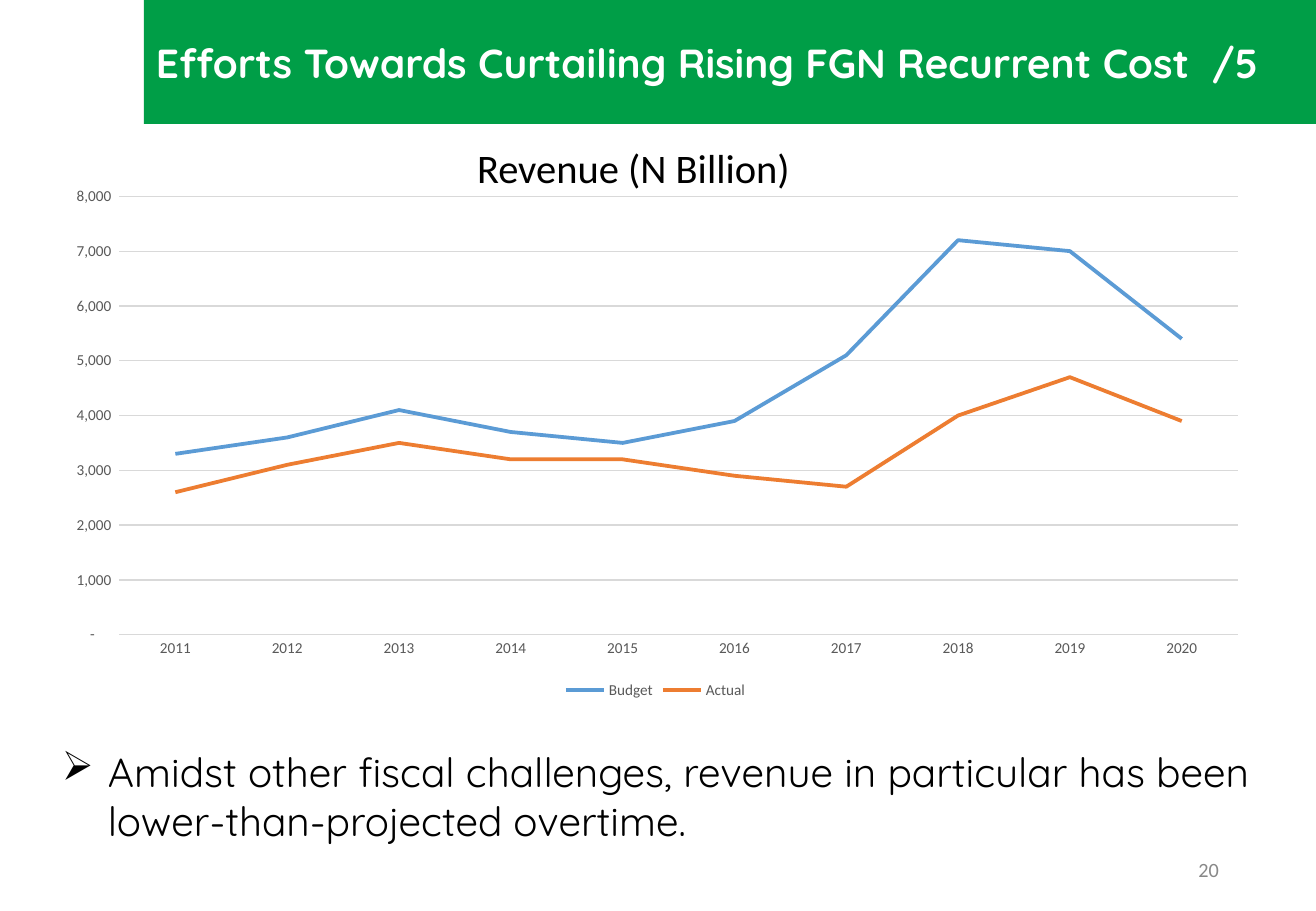
from lxml import etree
from pptx import Presentation
from pptx.chart.data import CategoryChartData
from pptx.dml.color import RGBColor
from pptx.enum.chart import XL_CHART_TYPE, XL_LEGEND_POSITION, XL_TICK_MARK
from pptx.enum.shapes import MSO_SHAPE
from pptx.enum.text import MSO_ANCHOR, PP_ALIGN
from pptx.oxml.ns import qn
from pptx.util import Emu, Pt

EMU_PER_PX = 7526
SLIDE_WIDTH, SLIDE_HEIGHT = 1316, 911

GREEN = RGBColor(0x00, 0x9E, 0x47)
WHITE = RGBColor(0xFF, 0xFF, 0xFF)
BLACK = RGBColor(0x00, 0x00, 0x00)
PAGE_GREY = RGBColor(0x88, 0x88, 0x88)
LABEL_GREY = RGBColor(0x59, 0x59, 0x59)
GRID_GREY = RGBColor(0xD9, 0xD9, 0xD9)
BLUE = RGBColor(0x5B, 0x9B, 0xD5)
ORANGE = RGBColor(0xED, 0x7D, 0x31)

HEADING_FONT = "Quicksand"
LABEL_FONT = "Calibri"

LEFT, CENTER, RIGHT, JUSTIFY = (
    PP_ALIGN.LEFT, PP_ALIGN.CENTER, PP_ALIGN.RIGHT, PP_ALIGN.JUSTIFY)
TOP, MIDDLE = MSO_ANCHOR.TOP, MSO_ANCHOR.MIDDLE
RECTANGLE = MSO_SHAPE.RECTANGLE
LINE_CHART = XL_CHART_TYPE.LINE
LEGEND_BOTTOM = XL_LEGEND_POSITION.BOTTOM
NO_TICKS = XL_TICK_MARK.NONE

YEARS = [str(year) for year in range(2011, 2021)]
REVENUE = [
    ("Budget", BLUE, [3300, 3600, 4100, 3700, 3500, 3900, 5100, 7200, 7000, 5400]),
    ("Actual", ORANGE, [2600, 3100, 3500, 3200, 3200, 2900, 2700, 4000, 4700, 3900]),
]
ACCOUNTING_FORMAT = r'_(* #,##0_);_(* \(#,##0\);_(* "-"??_);_('


def px(length):
    return Emu(length * EMU_PER_PX)


def box(left, top, width, height):
    return px(left), px(top), px(width), px(height)


def style_font(font, size, color, name=LABEL_FONT, bold=False):
    font.name = name
    font.size = Pt(size)
    font.bold = bold
    font.color.rgb = color


def add_bullet(paragraph, character, margin, hanging):
    properties = paragraph._p.get_or_add_pPr()
    properties.set("marL", str(px(margin)))
    properties.set("indent", str(px(-hanging)))
    etree.SubElement(properties, qn("a:buChar")).set("char", character)


def write_text(shape, text, *, size, color, font=LABEL_FONT, bold=False,
               align=LEFT, anchor=TOP, wrap=True, bullet=None):
    """Fill a shape with one formatted paragraph; bullet is (character, margin, hanging)."""
    frame = shape.text_frame
    frame.word_wrap = wrap
    frame.vertical_anchor = anchor
    paragraph = frame.paragraphs[0]
    paragraph.alignment = align
    if bullet:
        add_bullet(paragraph, *bullet)
    run = paragraph.add_run()
    run.text = text
    style_font(run.font, size, color, font, bold)


def add_text(slide, bounds, text, **text_format):
    write_text(slide.shapes.add_textbox(*box(*bounds)), text, **text_format)


def add_banner(slide, bounds, text, **text_format):
    banner = slide.shapes.add_shape(RECTANGLE, *box(*bounds))
    banner.shadow.inherit = False
    banner.fill.solid()
    banner.fill.fore_color.rgb = GREEN
    banner.line.fill.background()
    write_text(banner, text, **text_format)


def style_line(line, color, width):
    line.color.rgb = color
    line.width = Pt(width)


def style_axis(axis):
    axis.major_tick_mark = NO_TICKS
    axis.minor_tick_mark = NO_TICKS
    style_font(axis.tick_labels.font, 9, LABEL_GREY)


def add_revenue_chart(slide, bounds):
    data = CategoryChartData()
    data.categories = YEARS
    for name, _, values in REVENUE:
        data.add_series(name, values)
    chart = slide.shapes.add_chart(LINE_CHART, *box(*bounds), data).chart
    chart.has_title = False
    style_font(chart.font, 10, BLACK)

    chart.has_legend = True
    chart.legend.position = LEGEND_BOTTOM
    chart.legend.include_in_layout = False
    style_font(chart.legend.font, 9, LABEL_GREY)

    category_axis, value_axis = chart.category_axis, chart.value_axis
    style_axis(category_axis)
    style_line(category_axis.format.line, GRID_GREY, 0.75)
    style_axis(value_axis)
    value_axis.format.line.fill.background()
    value_axis.minimum_scale, value_axis.maximum_scale = 0, 8000
    value_axis.major_unit = 1000
    value_axis.has_major_gridlines = True
    style_line(value_axis.major_gridlines.format.line, GRID_GREY, 0.75)
    value_axis.tick_labels.number_format = ACCOUNTING_FORMAT
    value_axis.tick_labels.number_format_is_linked = False

    plot = chart.plots[0]
    plot.vary_by_categories = False
    for series, (_, color, _) in zip(plot.series, REVENUE):
        series.smooth = False
        style_line(series.format.line, color, 2.25)


def main():
    presentation = Presentation()
    presentation.slide_width = px(SLIDE_WIDTH)
    presentation.slide_height = px(SLIDE_HEIGHT)
    slide = presentation.slides.add_slide(presentation.slide_layouts[6])

    add_banner(slide, (144, 0, 1172, 124),
               "Efforts Towards Curtailing Rising FGN Recurrent Cost  /5",
               size=24, color=WHITE, font=HEADING_FONT, bold=True,
               align=JUSTIFY, anchor=MIDDLE)
    add_revenue_chart(slide, (49, 177, 1213, 527))
    add_text(slide, (362, 137, 543, 61), "Revenue (N Billion)",
             size=24, color=BLACK, align=CENTER)
    add_text(slide, (39, 741, 1222, 111),
             "Amidst other fiscal challenges, revenue in particular has been "
             "lower-than-projected overtime.",
             size=24, color=BLACK, font=HEADING_FONT, align=JUSTIFY,
             bullet=("➢", 57, 46))
    add_text(slide, (1185, 851, 46, 36), "20", size=12, color=PAGE_GREY,
             align=RIGHT, anchor=MIDDLE, wrap=False)

    presentation.save("out.pptx")


if __name__ == "__main__":
    main()
